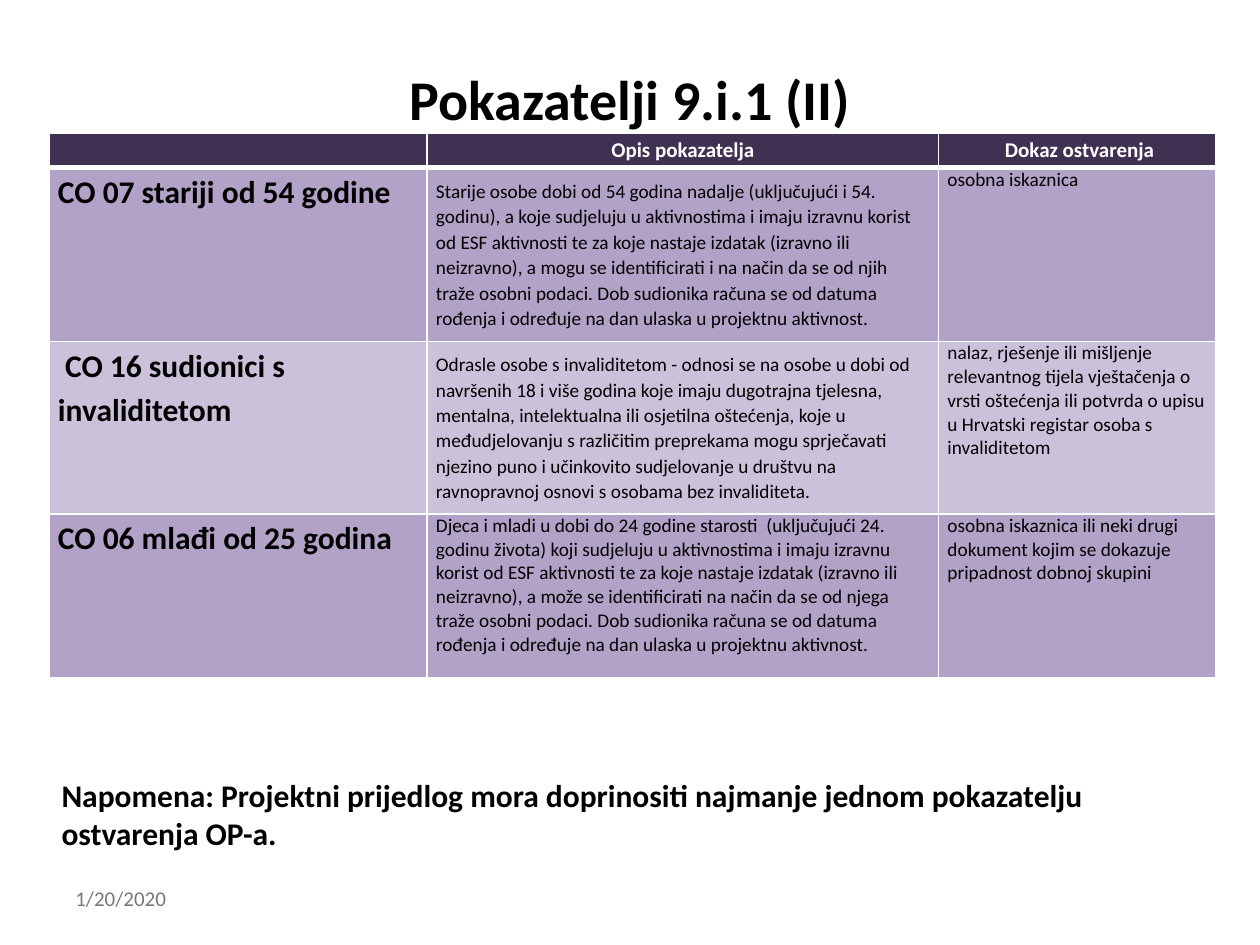
from lxml import etree
from pptx import Presentation
from pptx.dml import color
from pptx.enum import text
from pptx.oxml import ns
from pptx.util import Inches, Pt

BLACK = color.RGBColor(0x00, 0x00, 0x00)
WHITE = color.RGBColor(0xFF, 0xFF, 0xFF)
GREY = color.RGBColor(0x77, 0x78, 0x77)
PLUM = color.RGBColor(0x40, 0x31, 0x52)
LILAC = color.RGBColor(0xB3, 0xA2, 0xC7)
PALE_LILAC = color.RGBColor(0xCC, 0xC1, 0xDA)

COLUMN_WIDTHS = (3, 4.06, 2.2)
ROW_HEIGHTS = (0.27, 1.38, 1.37, 1.3)
HEADINGS = ("", "Opis pokazatelja", " Dokaz ostvarenja")
INDICATORS = (
    ("CO 07 stariji od 54 godine",
     "Starije osobe dobi od 54 godina nadalje (uključujući i 54. godinu), a koje sudjeluju u "
     "aktivnostima i imaju izravnu korist od ESF aktivnosti te za koje nastaje izdatak (izravno "
     "ili neizravno), a mogu se identificirati i na način da se od njih traže osobni podaci. Dob "
     "sudionika računa se od datuma rođenja i određuje na dan ulaska u projektnu aktivnost.",
     "osobna iskaznica"),
    (" CO 16 sudionici s invaliditetom",
     "Odrasle osobe s invaliditetom - odnosi se na osobe u dobi od navršenih 18 i više godina "
     "koje imaju dugotrajna tjelesna, mentalna, intelektualna ili osjetilna oštećenja, koje u "
     "međudjelovanju s različitim preprekama mogu sprječavati njezino puno i učinkovito "
     "sudjelovanje u društvu na ravnopravnoj osnovi s osobama bez invaliditeta.",
     "nalaz, rješenje ili mišljenje relevantnog tijela vještačenja o vrsti oštećenja ili potvrda "
     "o upisu u Hrvatski registar osoba s invaliditetom"),
    ("CO 06 mlađi od 25 godina",
     "Djeca i mladi u dobi do 24 godine starosti  (uključujući 24. godinu života) koji sudjeluju "
     "u aktivnostima i imaju izravnu korist od ESF aktivnosti te za koje nastaje izdatak (izravno "
     "ili neizravno), a može se identificirati na način da se od njega traže osobni podaci. Dob "
     "sudionika računa se od datuma rođenja i određuje na dan ulaska u projektnu aktivnost.",
     "osobna iskaznica ili neki drugi dokument kojim se dokazuje pripadnost dobnoj skupini"),
)


def style(paragraph, size, ink=BLACK, bold=False):
    """Set the font of a whole paragraph."""
    font = paragraph.font
    font.name, font.size, font.bold = "Calibri", Pt(size), bold
    font.color.rgb = ink


def add_title(slide, wording):
    """Place and format the title placeholder."""
    title = slide.shapes.title
    title.left, title.top, title.width, title.height = map(Inches, (0.5, 0.3, 9, 0.95))
    title.text_frame.text = wording
    title.text_frame.vertical_anchor = text.MSO_ANCHOR.MIDDLE
    heading = title.text_frame.paragraphs[0]
    heading.alignment = text.PP_ALIGN.CENTER
    style(heading, 32, bold=True)


def add_text(slide, wording, box, size, ink=BLACK, bold=False):
    """Add a wrapped text box with one paragraph."""
    frame = slide.shapes.add_textbox(*map(Inches, box)).text_frame
    frame.word_wrap = True
    frame.text = wording
    style(frame.paragraphs[0], size, ink, bold)


def set_borders(cell, top, bottom):
    """Draw white cell borders with the given top and bottom widths."""
    properties = cell._tc.get_or_add_tcPr()
    for side, width in (("L", 1), ("R", 1), ("T", top), ("B", bottom)):
        line = etree.SubElement(properties, ns.qn(f"a:ln{side}"), w=str(Pt(width)))
        fill = etree.SubElement(line, ns.qn("a:solidFill"))
        etree.SubElement(fill, ns.qn("a:srgbClr"), val=str(WHITE))


def fill_cell(cell, wording, fill, size, ink=BLACK, bold=False, spacing=None):
    """Fill a cell with colour and one paragraph; bold cells get spacing around."""
    cell.fill.solid()
    cell.fill.fore_color.rgb = fill
    cell.margin_left = cell.margin_right = Inches(0.07)
    cell.margin_top = cell.margin_bottom = 0
    cell.text = wording
    paragraph = cell.text_frame.paragraphs[0]
    if spacing:
        paragraph.line_spacing = spacing
    if bold:
        paragraph.space_before = paragraph.space_after = Pt(3)
    style(paragraph, size, ink, bold)


def add_indicator_table(slide):
    """Add the table of indicators with its heading row."""
    box = map(Inches, (0.39, 1.06, sum(COLUMN_WIDTHS), sum(ROW_HEIGHTS)))
    table = slide.shapes.add_table(len(ROW_HEIGHTS), len(COLUMN_WIDTHS), *box).table
    for column, width in zip(table.columns, COLUMN_WIDTHS):
        column.width = Inches(width)
    for number, (row, height) in enumerate(zip(table.rows, ROW_HEIGHTS)):
        row.height = Inches(height)
        for cell in row.cells:
            set_borders(cell, 3 if number == 1 else 1, 3 if number == 0 else 1)

    for cell, heading in zip(table.rows[0].cells, HEADINGS):
        fill_cell(cell, heading, PLUM, 12, WHITE, True, 1.15)
        cell.text_frame.paragraphs[0].alignment = text.PP_ALIGN.CENTER

    for number, (indicator, description, proof) in enumerate(INDICATORS, 1):
        fill = LILAC if number % 2 else PALE_LILAC
        name_cell, description_cell, proof_cell = table.rows[number].cells
        fill_cell(name_cell, indicator, fill, 18, bold=True, spacing=1.15)
        fill_cell(proof_cell, proof, fill, 11)
        if number < len(INDICATORS):
            fill_cell(description_cell, description, fill, 11, spacing=1.07)
            description_cell.vertical_anchor = text.MSO_ANCHOR.MIDDLE
        else:
            fill_cell(description_cell, description, fill, 11)


def main():
    """Build the slide and save it."""
    deck = Presentation()
    deck.slide_width, deck.slide_height = Inches(10), Inches(7.5)
    slide = deck.slides.add_slide(deck.slide_layouts[5])
    add_text(slide, "1/20/2020", (0.5, 6.98, 2.33, 0.4), 12, GREY)
    add_title(slide, "Pokazatelji 9.i.1 (II)")
    add_indicator_table(slide)
    add_text(slide, "Napomena: Projektni prijedlog mora doprinositi najmanje jednom pokazatelju "
             "ostvarenja OP-a.", (0.39, 6.11, 9.26, 0.71), 18, bold=True)
    deck.save("out.pptx")


if __name__ == "__main__":
    main()
